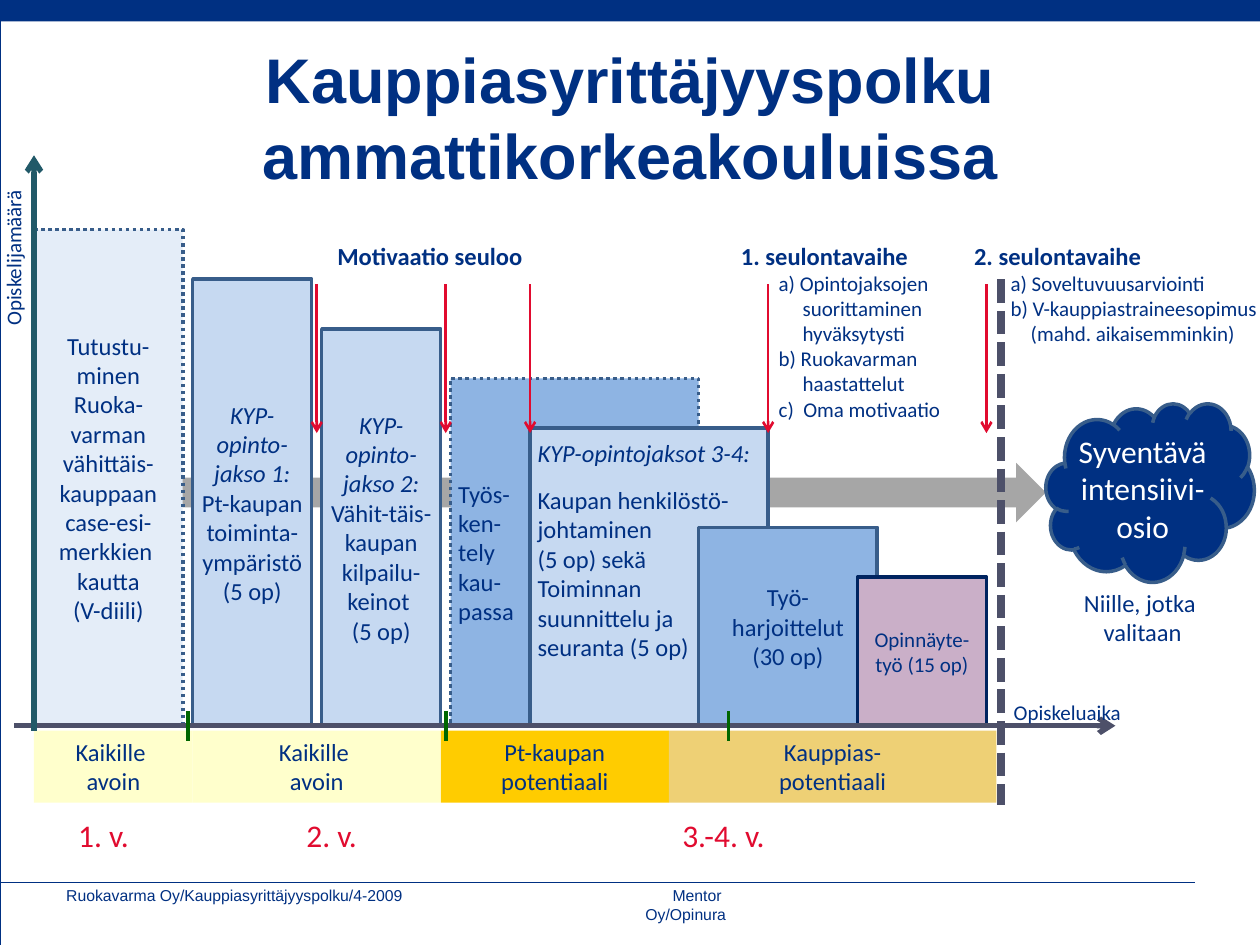
from copy import deepcopy
from dataclasses import dataclass

from lxml import etree
from pptx import Presentation
from pptx.dml.color import RGBColor
from pptx.enum.dml import MSO_LINE
from pptx.enum.shapes import MSO_CONNECTOR, MSO_SHAPE
from pptx.enum.text import MSO_ANCHOR, PP_ALIGN
from pptx.oxml.ns import qn
from pptx.util import Inches, Mm, Pt

RECT, ARROW, CLOUD = MSO_SHAPE.RECTANGLE, MSO_SHAPE.RIGHT_ARROW, MSO_SHAPE.CLOUD
LEFT, CENTER, RIGHT = PP_ALIGN.LEFT, PP_ALIGN.CENTER, PP_ALIGN.RIGHT
TOP, MIDDLE = MSO_ANCHOR.TOP, MSO_ANCHOR.MIDDLE
DOT, DASH = MSO_LINE.ROUND_DOT, MSO_LINE.SQUARE_DOT
STRAIGHT = MSO_CONNECTOR.STRAIGHT


@dataclass(frozen=True)
class Theme:
    navy: str = "003082"
    white: str = "FFFFFF"
    edge: str = "385D8A"
    pale: str = "E4EDF8"
    light: str = "C6D9F1"
    mid: str = "8EB4E3"
    mauve: str = "CAAFC8"
    mauve_edge: str = "002460"
    grey: str = "A6A6A6"
    slate: str = "4D5069"
    teal: str = "215968"
    green: str = "006600"
    red: str = "E10B2F"
    cream: str = "FFFFCC"
    gold: str = "FFCC00"
    sand: str = "EED075"
    body_font: str = "Calibri"
    head_font: str = "Arial"
    title: int = 36
    big: int = 18
    body: int = 14
    small: int = 12
    footer: int = 9


T = Theme()

# Grid of 2 mm cells: columns run right from the y axis, rows up from the x axis
CELL = Mm(2)
AXIS_X, AXIS_Y = Inches(0.27), Inches(5.76)


def col(n):
    return AXIS_X + int(n * CELL)


def row(n):
    return AXIS_Y - int(n * CELL)


def rgb(value):
    return RGBColor.from_string(value)


def write(tf, paras, size=T.body, color=T.navy, font=T.body_font, align=LEFT,
          anchor=TOP, inset=(0.1, 0.05), wrap=True, lead=None, gap=0, indents=()):
    """Fill a frame; lead formats the first paragraph, gap follows it."""
    side, end = (Inches(v) for v in inset)
    frame = dict(word_wrap=wrap, vertical_anchor=anchor, margin_left=side,
                 margin_right=side, margin_top=end, margin_bottom=end)
    for name, value in frame.items():
        setattr(tf, name, value)
    for i, text in enumerate(paras):
        p = tf.add_paragraph() if i else tf.paragraphs[0]
        p.text, p.alignment = text, align
        if i == 1 and gap:
            p.space_before = Pt(gap)
        if indents:
            left, first = indents[i]
            pPr = p._p.get_or_add_pPr()
            pPr.set("marL", str(Inches(left)))
            pPr.set("indent", str(Inches(first)))
        style = dict(name=font, size=Pt(size), bold=False, italic=False)
        if i == 0:
            style.update(lead or {})
        for r in p.runs:
            for name, value in style.items():
                setattr(r.font, name, value)
            r.font.color.rgb = rgb(color)
        for br in p._p.findall(qn("a:br")):
            br.append(deepcopy(p.runs[0]._r.rPr))


def style_line(line, color, width, dash=None):
    line.color.rgb, line.width = rgb(color), Pt(width)
    if dash:
        line.dash_style = dash


def shape(s, kind, box, fill=None, line=None, paras=(), **text):
    """Box is left, top, width, height in slide units."""
    sp = s.shapes.add_shape(kind, *box)
    sp.shadow.inherit = False
    if fill:
        sp.fill.solid()
        sp.fill.fore_color.rgb = rgb(fill)
    else:
        sp.fill.background()
    if line:
        style_line(sp.line, *line)
    else:
        sp.line.fill.background()
    if paras:
        write(sp.text_frame, paras, **text)
    return sp


def cells(x, y, w, h):
    return col(x), row(y), int(w * CELL), int(h * CELL)


def bar(s, x, w, h, fill, paras, line=(T.edge, 2), **text):
    """A block standing on the x axis."""
    text = dict(dict(anchor=MIDDLE, align=CENTER, inset=(0.06, 0.05)), **text)
    shape(s, RECT, cells(x, h, w, h), fill, line, paras, **text)


def label(s, x, y, w, h, paras, rotation=0, **text):
    sp = s.shapes.add_textbox(*cells(x, y, w, h))
    sp.rotation = rotation
    write(sp.text_frame, paras, **text)


def line(s, x1, y1, x2, y2, color, width, dash=None, arrow=False):
    cx = s.shapes.add_connector(STRAIGHT, col(x1), row(y1), col(x2), row(y2))
    style_line(cx.line, color, width, dash)
    if arrow:
        etree.SubElement(cx.line._get_or_add_ln(), qn("a:tailEnd"), type="arrow")
    etree.SubElement(cx._element.spPr, qn("a:effectLst"))


def add_frame(prs, s):
    # Page border, top band, title and footer
    shape(s, RECT, (0, 0, prs.slide_width, prs.slide_height), line=(T.navy, 0.1))
    shape(s, RECT, (0, 0, prs.slide_width, Inches(0.17)), T.navy)
    title = s.shapes.title
    title.left, title.top, title.width, title.height = (
        Inches(v) for v in (0.75, 0.3, 8.5, 1.25))
    write(title.text_frame, ["Kauppiasyrittäjyyspolku\nammattikorkeakouluissa"],
          size=T.title, font=T.head_font, align=CENTER, anchor=MIDDLE, lead=dict(bold=True))
    line(s, 117, -15.75, -3.4, -15.75, T.navy, 0.25)
    foot = dict(size=T.footer, font=T.head_font)
    label(s, 2, -15.5, 39, 3, ["Ruokavarma Oy/Kauppiasyrittäjyyspolku/4-2009"], **foot)
    label(s, 55, -15.5, 16, 3, ["Mentor  Oy/Opinura"], align=RIGHT, wrap=False, **foot)


def add_bars(s):
    italic = dict(italic=True)
    shape(s, ARROW, cells(0, 26.5, 102, 6), T.grey)
    bar(s, 0, 15, 50, T.pale,
        ["Tutustu-minen Ruoka-varman vähittäis-", "kauppaan", "case-esi-merkkien ",
         "kautta", "(V-diili)"], line=(T.edge, 2, DOT), inset=(0.1, 0.05))
    bar(s, 16, 12, 45, T.light,
        ["KYP-opinto-jakso 1:", "Pt-kaupan toiminta-ympäristö", "(5 op)"], lead=italic)
    bar(s, 29, 12, 40, T.light,
        ["KYP-opinto-jakso 2:", "Vähit-täis-kaupan kilpailu-keinot ", "(5 op)"], lead=italic)
    bar(s, 42, 25, 35, T.mid, ["Työs-", "ken-", "tely", "kau-", "passa"],
        line=(T.edge, 2, DOT), align=LEFT)
    bar(s, 50, 24, 30, T.light,
        ["KYP-opintojaksot 3-4:", "Kaupan henkilöstö-johtaminen ", "(5 op) sekä",
         "Toiminnan", "suunnittelu ja seuranta (5 op)"],
        lead=italic, gap=10, align=LEFT, anchor=TOP, inset=(0.06, 0.08))
    bar(s, 67, 18, 20, T.mid, ["Työ-", "harjoittelut", "(30 op)"])
    bar(s, 83, 13, 15, T.mauve, ["Opinnäyte-työ (15 op)"], line=(T.mauve_edge, 2),
        size=T.small, inset=(0.1, 0.05))
    shape(s, CLOUD, cells(102, 32.5, 21, 18), T.navy, (T.edge, 2),
          ["Syventävä", "intensiivi-osio"], size=T.big, color=T.white,
          align=CENTER, anchor=MIDDLE, inset=(0, 0))


def add_timeline(s):
    # Bands under the axis, side by side
    x = 0
    for w, fill, paras in ((16, T.cream, ["Kaikille ", "avoin"]),
                           (25, T.cream, ["Kaikille ", "avoin"]),
                           (23, T.gold, ["Pt-kaupan", "potentiaali"]),
                           (33, T.sand, ["Kauppias-", "potentiaali"])):
        shape(s, RECT, cells(x, -0.5, w, 7.25), fill, None, paras, align=CENTER)
        x += w
    for x, w, text in ((3, 8, "1. v."), (26, 8, "2. v."), (57, 25, "3.-4. v.")):
        label(s, x, -8.5, w, 5, [text], size=T.big, color=T.red, align=CENTER, wrap=False)
    # Axes and year ticks
    line(s, -2, 0, 109, 0, T.slate, 3, arrow=True)
    line(s, 0, -0.5, 0, 57.5, T.teal, 3, arrow=True)
    for x in (15.5, 41.5, 70):
        line(s, x, 1.5, x, -1.5, T.green, 2.25)
    label(s, 97.5, 3.25, 13.5, 4, ["Opiskeluaika"], size=T.small, wrap=False)
    label(s, -10.25, 49, 16.5, 4, ["Opiskelijamäärä"], rotation=270, size=T.small,
          align=RIGHT, wrap=False)


def add_screening(s):
    # Arrows and notes for the selection stages
    bold = dict(bold=True, size=Pt(T.body))
    for x in (28.5, 41.5, 50, 74, 96):
        line(s, x, 44.5, x, 29.5, T.red, 1.5, arrow=True)
    line(s, 97.5, 45, 97.5, -8, T.slate, 4.5, dash=DASH)
    label(s, 29, 49.5, 21.5, 4, ["Motivaatio seuloo"], lead=bold, align=RIGHT, wrap=False)
    label(s, 70, 49.5, 31, 19.5,
          ["1. seulontavaihe", "a) Opintojaksojen \nsuorittaminen hyväksytysti",
           "b) Ruokavarman \nhaastattelut", "c)  Oma motivaatio"],
          size=T.small, lead=bold, indents=[(0.1, -0.1)] + [(0.49, -0.19)] * 3)
    label(s, 93.5, 49.5, 32.5, 12,
          ["2. seulontavaihe", "a) Soveltuvuusarviointi", "b) V-kauppiastraineesopimus",
           "(mahd. aikaisemminkin)"], size=T.small, lead=bold,
          indents=[(0.09, -0.09), (0.45, -0.16), (0.45, -0.16), (0.45, 0)])
    label(s, 104.5, 14.5, 14.5, 7.25, ["Niille, jotka ", "valitaan"], align=CENTER, wrap=False)


def main():
    prs = Presentation()
    prs.slide_width, prs.slide_height = Inches(10), Inches(7.5)
    s = prs.slides.add_slide(prs.slide_layouts[5])
    add_frame(prs, s)
    add_bars(s)
    add_timeline(s)
    add_screening(s)
    prs.save("out.pptx")


if __name__ == "__main__":
    main()
